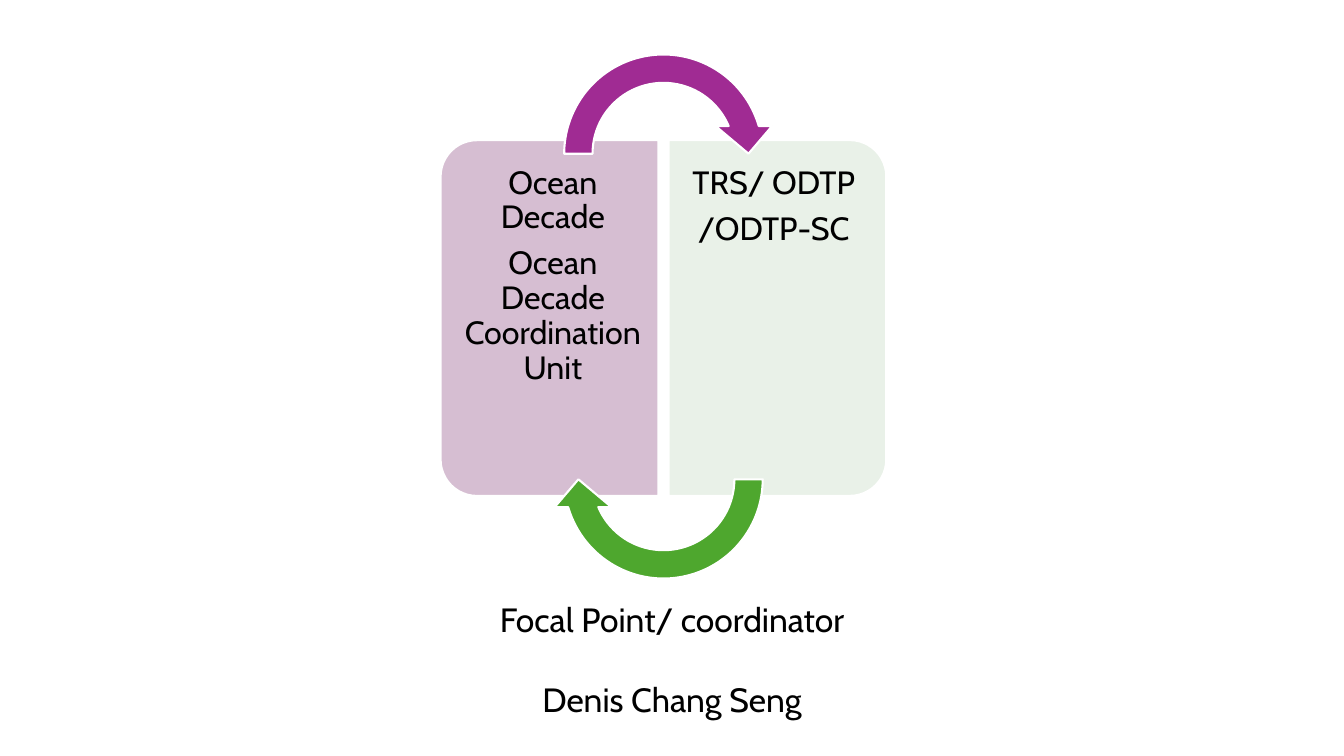
from pptx import Presentation
from pptx.dml.color import RGBColor
from pptx.enum.shapes import MSO_SHAPE
from pptx.enum.text import MSO_ANCHOR, PP_ALIGN
from pptx.util import Inches, Pt


def rgb(value):
    """Turn a hex string into a colour."""
    return RGBColor.from_string(value)


def add_figure(slide, kind, box, color, rotation, adjustments):
    """Add a filled preset shape with a white outline."""
    sp = slide.shapes.add_shape(kind, *map(Inches, box))
    sp.shadow.inherit = False
    sp.rotation = rotation
    for i, value in enumerate(adjustments):
        sp.adjustments[i] = value
    sp.fill.solid()
    sp.fill.fore_color.rgb = rgb(color)
    sp.line.color.rgb = rgb("FFFFFF")
    sp.line.width = Pt(1.5)


def add_text(slide, box, lines, size, margins, wrap=True,
             line_spacing=1.0, before=0, after=0):
    """Add centred paragraphs, with space before all but the first."""
    tf = slide.shapes.add_textbox(*map(Inches, box)).text_frame
    tf.word_wrap = wrap
    tf.vertical_anchor = MSO_ANCHOR.TOP
    tf.margin_left, tf.margin_top, tf.margin_right, tf.margin_bottom = map(Inches, margins)
    for i, line in enumerate(lines):
        p = tf.paragraphs[0] if i == 0 else tf.add_paragraph()
        p.alignment = PP_ALIGN.CENTER
        p.line_spacing = line_spacing
        p.space_before = Pt(before if i else 0)
        p.space_after = Pt(after)
        r = p.add_run()
        r.text = line
        r.font.name = "Cabin"
        r.font.size = Pt(size)
        r.font.color.rgb = rgb("000000")


def add_panel(slide, box, color, rotation, lines, text_left, margins):
    """Add a panel rounded on its outer side, with its text."""
    left, top, width, height = box
    turned = (left + (width - height) / 2, top + (height - width) / 2, height, width)
    add_figure(slide, MSO_SHAPE.ROUND_2_SAME_RECTANGLE, turned, color, rotation, (0.167, 0))
    text_box = (left + text_left, top + 0.1, 2.05, height - 0.21)
    add_text(slide, text_box, lines, 23, margins, line_spacing=0.9, after=8)


def add_cycle(slide, left, top):
    """Add both panels and the arrows that circle between them."""
    width, height, pitch = 2.16, 3.53, 2.26
    panels = (
        ("D6BED2", 270, ("Ocean Decade", "Ocean Decade Coordination Unit"),
         0.11, (0.1, 0.16, 0.14, 0.16)),
        ("E9F1E8", 90, ("TRS/ ODTP", "/ODTP-SC"), 0, (0.14, 0.16, 0.1, 0.16)),
    )
    for i, panel in enumerate(panels):
        add_panel(slide, (left + i * pitch, top, width, height), *panel)
    size = 2.25
    arrow_left = left + (pitch + width - size) / 2
    for offset, color, rotation in ((-0.99, "A02B93", 0), (2.24, "4EA72E", 180)):
        add_figure(slide, MSO_SHAPE.CIRCULAR_ARROW,
                   (arrow_left, top + offset, size, size), color, rotation,
                   (0.125, 11.423, 204.577, 108, 0.125))


def add_contact(slide, box):
    """Add the contact's role and name."""
    add_text(slide, box, ("Focal Point/ coordinator", "Denis Chang Seng"), 24,
             (0.1, 0.05, 0.1, 0.05), wrap=False, before=28.8)


def main():
    """Build and save the slide."""
    prs = Presentation()
    prs.slide_width, prs.slide_height = Inches(13.33), Inches(7.5)
    s = prs.slides.add_slide(prs.slide_layouts[6])
    add_cycle(s, 4.37, 1.39)
    add_contact(s, (4.82, 5.89, 3.69, 1.31))
    prs.save("out.pptx")


if __name__ == "__main__":
    main()
